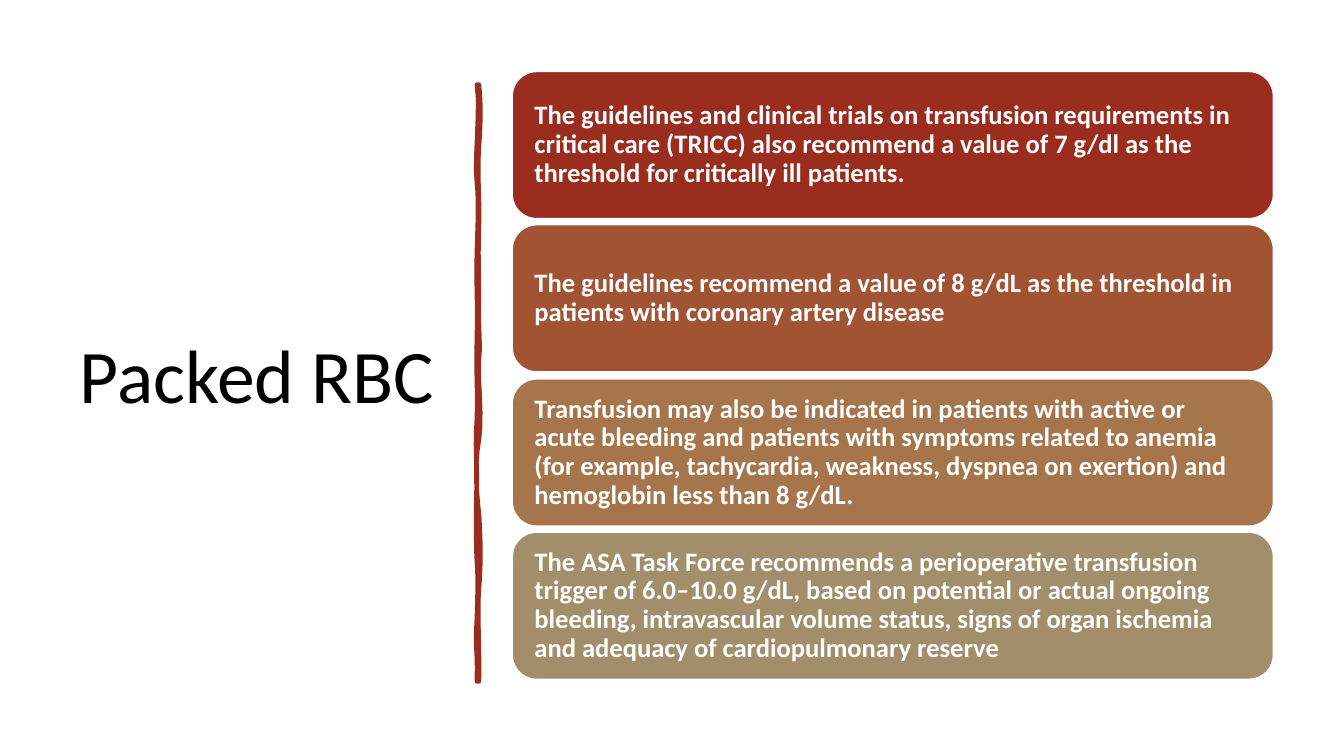
from dataclasses import dataclass

from pptx import Presentation
from pptx.dml.color import RGBColor
from pptx.enum.shapes import MSO_SHAPE
from pptx.enum.text import MSO_ANCHOR, MSO_AUTO_SIZE, PP_ALIGN
from pptx.util import Pt

PX = 9144  # EMU per px, 100 px to the inch
TITLE_ONLY = 5
ROUNDED = MSO_SHAPE.ROUNDED_RECTANGLE
MIDDLE = MSO_ANCHOR.MIDDLE
NO_AUTOFIT = MSO_AUTO_SIZE.NONE
LEFT = PP_ALIGN.LEFT
FONT = "Calibri"
WHITE = "FFFFFF"
BRICK = "9B2D1F"

CARD_LEFT, CARD_WIDTH, CARD_HEIGHT = 508, 755, 146
FIRST_TOP, LAST_TOP = 71, 528
CARD_INSET = 15
CURVE_STEPS = 6


@dataclass(frozen=True)
class Guideline:
    text: str
    fill: str


@dataclass(frozen=True)
class Curve:
    """Cubic stretch of the divider's edge: two control points and an end, in px."""
    control1: tuple[int, int]
    control2: tuple[int, int]
    end: tuple[int, int]


GUIDELINES = [
    Guideline("The guidelines and clinical trials on transfusion requirements in critical care "
              "(TRICC) also recommend a value of 7 g/dl as the threshold for critically ill "
              "patients.", BRICK),
    Guideline("The guidelines recommend a value of 8 g/dL as the threshold in patients with "
              "coronary artery disease", "A25333"),
    Guideline("Transfusion may also be indicated in patients with active or acute bleeding and "
              "patients with symptoms related to anemia (for example, tachycardia, weakness, "
              "dyspnea on exertion) and hemoglobin less than 8 g/dL.", "A6754B"),
    Guideline("The ASA Task Force recommends a perioperative transfusion trigger of "
              "6.0–10.0 g/dL, based on potential or actual ongoing bleeding, intravascular "
              "volume status, signs of organ ischemia and adequacy of cardiopulmonary reserve",
              "A28E6A"),
]

DIVIDER_START = (475, 84)
DIVIDER = [
    Curve((477, 102), (477, 119), (475, 146)),
    Curve((473, 173), (476, 195), (475, 226)),
    Curve((474, 257), (475, 262), (475, 294)),
    Curve((474, 325), (477, 342), (475, 356)),
    Curve((473, 370), (479, 414), (475, 436)),
    Curve((471, 457), (472, 484), (475, 510)),
    Curve((477, 536), (477, 564), (475, 584)),
    Curve((473, 603), (476, 650), (475, 676)),
    Curve((474, 676), (473, 676), (473, 676)),
    Curve((474, 646), (471, 644), (473, 613)),
    Curve((474, 583), (474, 570), (473, 557)),
    Curve((472, 544), (472, 495), (473, 477)),
    Curve((473, 459), (471, 445), (473, 415)),
    Curve((474, 386), (472, 373), (473, 335)),
    Curve((474, 298), (472, 281), (473, 250)),
    Curve((474, 218), (475, 200), (473, 181)),
    Curve((470, 163), (477, 104), (473, 84)),
]


def px(length: int) -> int:
    return length * PX


def color(hex_code: str) -> RGBColor:
    return RGBColor.from_string(hex_code)


def paint(shape, fill: str, line: str, line_width: float) -> None:
    shape.shadow.inherit = False
    shape.fill.solid()
    shape.fill.fore_color.rgb = color(fill)
    shape.line.color.rgb = color(line)
    shape.line.width = Pt(line_width)


def write(frame, text: str, size: int, font_color: str, bold: bool) -> None:
    frame.word_wrap = True
    frame.auto_size = NO_AUTOFIT
    frame.vertical_anchor = MIDDLE
    paragraph = frame.paragraphs[0]
    paragraph.alignment = LEFT
    paragraph.line_spacing = 0.9
    run = paragraph.add_run()
    run.text = text
    run.font.name = FONT
    run.font.size = Pt(size)
    run.font.bold = bold
    run.font.color.rgb = color(font_color)


def add_title(slide) -> None:
    title = slide.shapes.title
    title.left, title.top, title.width, title.height = map(px, (69, 70, 374, 611))
    write(title.text_frame, "Packed RBC", 54, "000000", False)


def add_divider(slide) -> None:
    points = []
    start = DIVIDER_START
    for curve in DIVIDER:
        corners = (start, curve.control1, curve.control2, curve.end)
        for step in range(1, CURVE_STEPS + 1):
            t = step / CURVE_STEPS
            weights = ((1 - t) ** 3, 3 * t * (1 - t) ** 2, 3 * t ** 2 * (1 - t), t ** 3)
            points.append(tuple(
                round(sum(w * corner[axis] for w, corner in zip(weights, corners)) * PX)
                for axis in (0, 1)))
        start = curve.end
    builder = slide.shapes.build_freeform(*map(px, DIVIDER_START))
    builder.add_line_segments(points, close=True)
    paint(builder.convert_to_shape(), BRICK, BRICK, 3.25)


def add_card(slide, guideline: Guideline, top: int) -> None:
    card = slide.shapes.add_shape(
        ROUNDED, px(CARD_LEFT), px(top), px(CARD_WIDTH), px(CARD_HEIGHT))
    paint(card, guideline.fill, WHITE, 1)
    frame = card.text_frame
    frame.margin_left = frame.margin_right = px(CARD_INSET)
    frame.margin_top = frame.margin_bottom = px(CARD_INSET)
    write(frame, guideline.text, 19, WHITE, True)


def main() -> None:
    presentation = Presentation()
    presentation.slide_width, presentation.slide_height = px(1333), px(750)
    slide = presentation.slides.add_slide(presentation.slide_layouts[TITLE_ONLY])
    add_title(slide)
    add_divider(slide)
    pitch = (LAST_TOP - FIRST_TOP) / (len(GUIDELINES) - 1)
    for index, guideline in enumerate(GUIDELINES):
        add_card(slide, guideline, round(FIRST_TOP + index * pitch))
    presentation.save("out.pptx")


if __name__ == "__main__":
    main()
